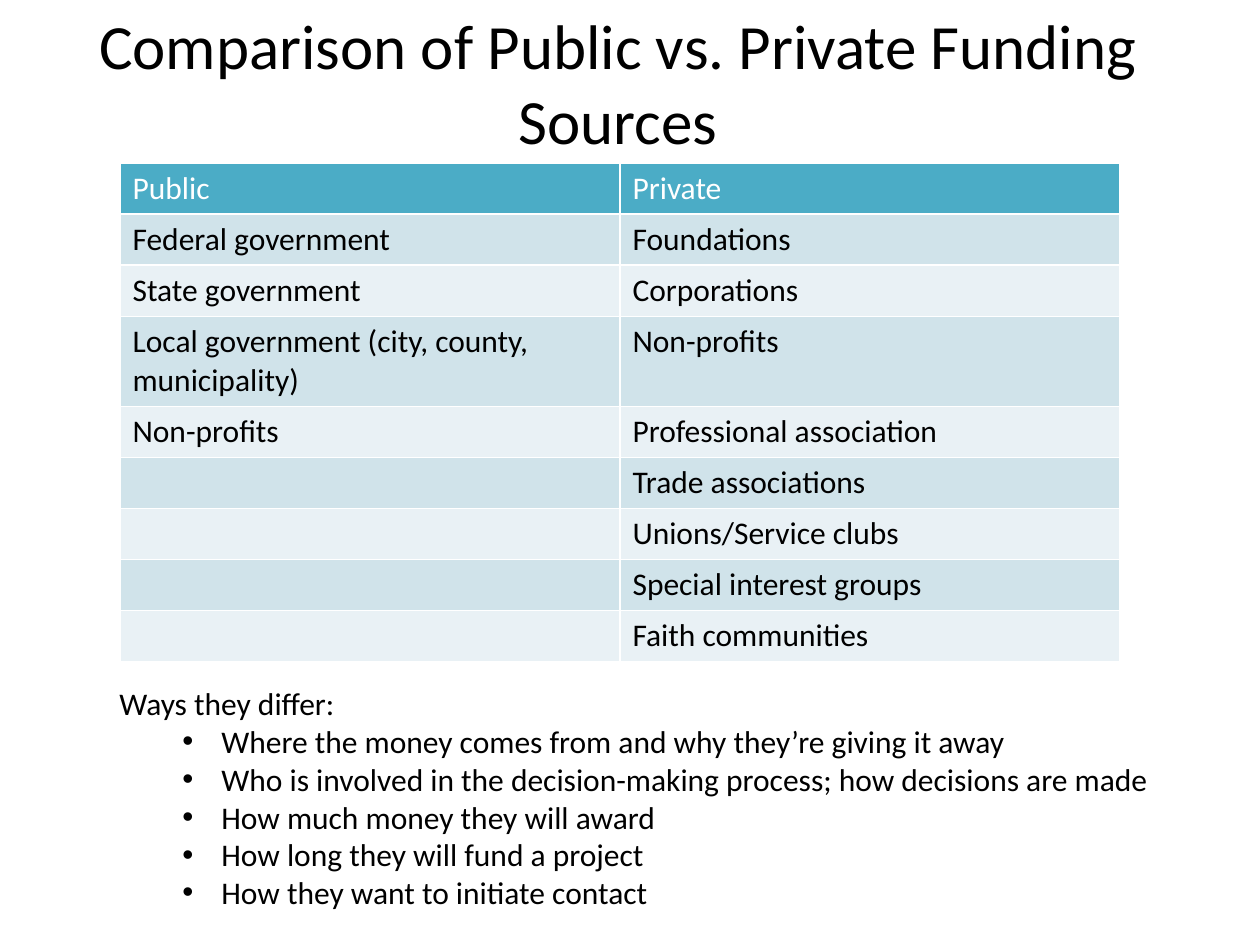
from lxml import etree
from pptx import Presentation
from pptx import util as u
from pptx.dml.color import RGBColor
from pptx.enum import text
from pptx.oxml.ns import qn

TITLE = "Comparison of Public vs. Private Funding Sources"
ROWS = [
    ("Public", "Private"),
    ("Federal government", "Foundations"),
    ("State government", "Corporations"),
    ("Local government (city, county, municipality)", "Non-profits"),
    ("Non-profits", "Professional association"),
    ("", "Trade associations"),
    ("", "Unions/Service clubs"),
    ("", "Special interest groups"),
    ("", "Faith communities"),
]
INTRO = "Ways they differ:"
DIFFERENCES = [
    "Where the money comes from and why they’re giving it away",
    "Who is involved in the decision-making process; how decisions are made",
    "How much money they will award",
    "How long they will fund a project",
    "How they want to initiate contact",
]

FONT = "Calibri"
BLACK = RGBColor(0x00, 0x00, 0x00)
WHITE = RGBColor(0xFF, 0xFF, 0xFF)
TEAL = RGBColor(0x4B, 0xAC, 0xC6)
BANDS = [RGBColor(0xE9, 0xF1, 0xF5), RGBColor(0xD0, 0xE3, 0xEA)]
ROW_HEIGHT, TALL_ROW_HEIGHT, TALL_ROW = 51, 90, 3


def px(value):
    return u.Emu(round(value * u.Inches(1) / 126))


def box(left, top, width, height):
    return px(left), px(top), px(width), px(height)


def format_runs(paragraph, size, color):
    for run in paragraph.runs:
        run.font.name = FONT
        run.font.size = u.Pt(size)
        run.font.bold = False
        run.font.color.rgb = color


def add_title(slide):
    title = slide.shapes.title
    title.left, title.top, title.width, title.height = box(60, 19, 1116, 126)
    frame = title.text_frame
    frame.text = TITLE
    frame.word_wrap = True
    frame.vertical_anchor = text.MSO_ANCHOR.MIDDLE
    paragraph = frame.paragraphs[0]
    paragraph.alignment = text.PP_ALIGN.CENTER
    format_runs(paragraph, 36, BLACK)


def add_funding_table(slide):
    heights = [TALL_ROW_HEIGHT if i == TALL_ROW else ROW_HEIGHT for i in range(len(ROWS))]
    table = slide.shapes.add_table(len(ROWS), 2, *box(120, 163, 1000, sum(heights))).table
    for i, (values, height) in enumerate(zip(ROWS, heights)):
        table.rows[i].height = px(height)
        for cell, value in zip(table.rows[i].cells, values):
            cell.fill.solid()
            cell.fill.fore_color.rgb = BANDS[i % 2] if i else TEAL
            cell.text = value
            format_runs(cell.text_frame.paragraphs[0], 18, BLACK if i else WHITE)


def add_bullet(paragraph):
    paragraph.level = 1
    properties = paragraph._p.get_or_add_pPr()
    properties.set("marL", str(px(102)))
    properties.set("indent", str(px(-39)))
    etree.SubElement(properties, qn("a:buFont"), typeface="Arial")
    etree.SubElement(properties, qn("a:buChar"), char="•")


def add_differences(slide):
    frame = slide.shapes.add_textbox(*box(107, 678, 1120, 242)).text_frame
    frame.word_wrap = True
    frame.text = INTRO
    for difference in DIFFERENCES:
        paragraph = frame.add_paragraph()
        paragraph.text = difference
        add_bullet(paragraph)
    for paragraph in frame.paragraphs:
        format_runs(paragraph, 18, BLACK)


def main():
    presentation = Presentation()
    presentation.slide_width, presentation.slide_height = px(1260), px(945)
    slide = presentation.slides.add_slide(presentation.slide_layouts[5])
    add_title(slide)
    add_funding_table(slide)
    add_differences(slide)
    presentation.save("out.pptx")


if __name__ == "__main__":
    main()
